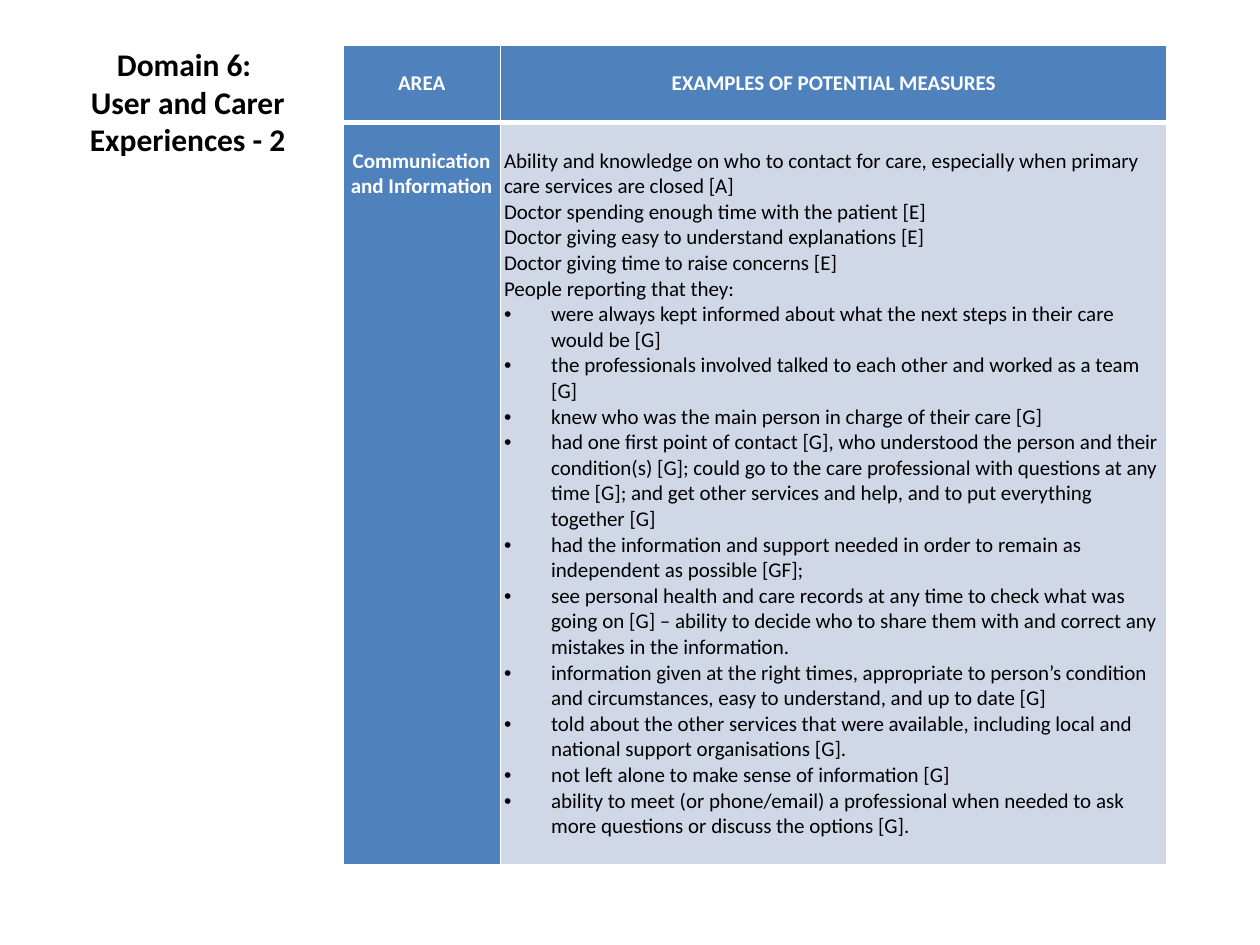
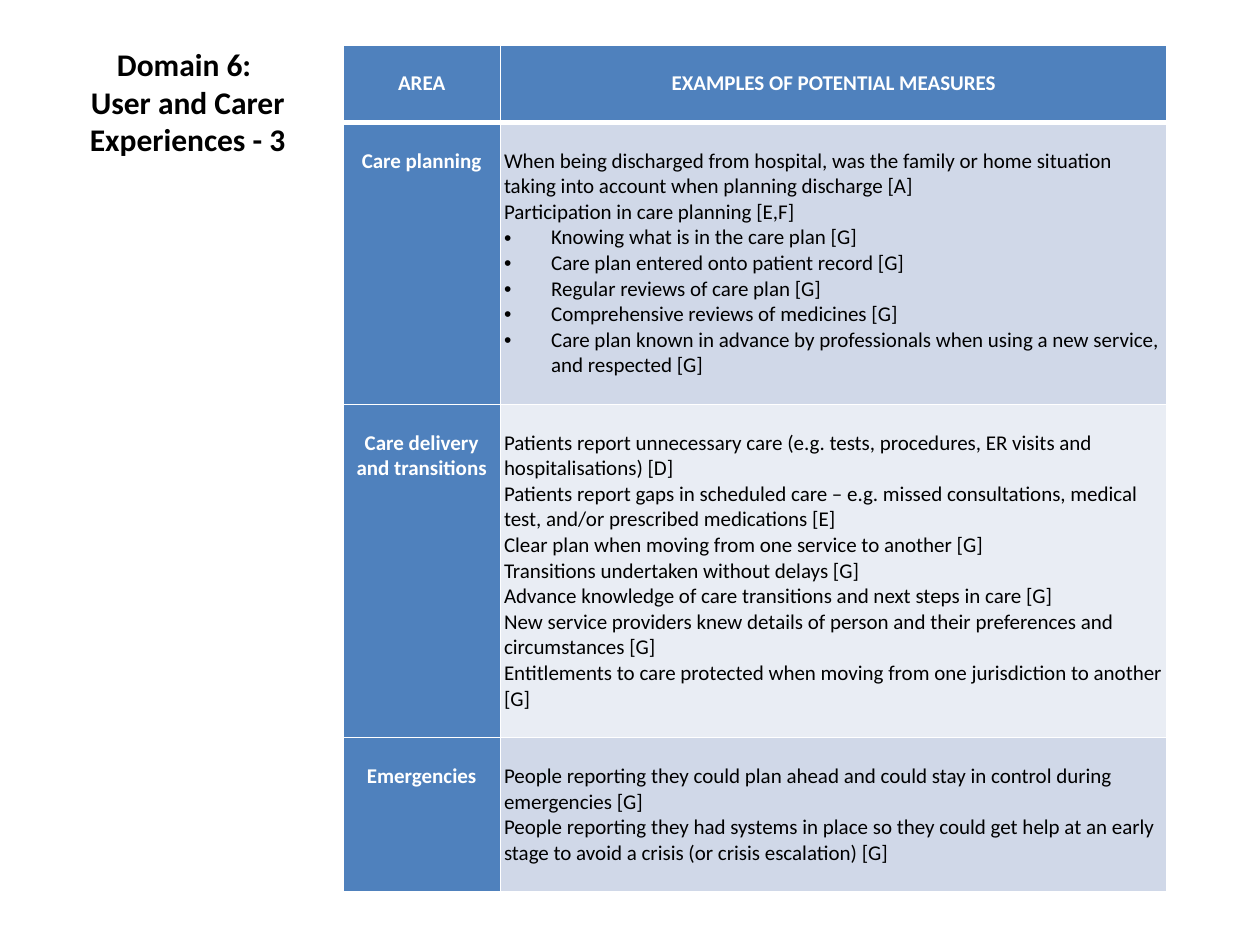
from dataclasses import dataclass

from lxml.etree import SubElement
from pptx import Presentation
from pptx.dml.color import RGBColor
from pptx.enum.text import MSO_ANCHOR, MSO_AUTO_SIZE, PP_ALIGN
from pptx.oxml.ns import qn
from pptx.slide import Slide
from pptx.table import _Cell
from pptx.text.text import _Paragraph
from pptx.util import Cm, Length, Pt

WHITE = RGBColor(0xFF, 0xFF, 0xFF)
BLACK = RGBColor(0x00, 0x00, 0x00)
BLUE = RGBColor(0x4F, 0x81, 0xBD)
ROW_SHADES = (RGBColor(0xD0, 0xD8, 0xE8), RGBColor(0xE9, 0xED, 0xF4))

FONT = "Calibri"
TITLE_SIZE = Pt(18)
TABLE_SIZE = Pt(12)
TITLE_BOX = (Cm(1.27), Cm(0.76), Cm(5.03), Cm(2.57))
TABLE_LEFT, TABLE_TOP = Cm(6.91), Cm(0.91)
AREA_WIDTH, MEASURES_WIDTH = Cm(3.18), Cm(13.44)
HEADER_HEIGHT = Cm(1.55)
SIDE_MARGIN, LINE_MARGIN = Cm(0.07), Cm(0.52)
BULLET_INDENT = Cm(0.95)
THIN, THICK = Pt(1), Pt(3)
HEADINGS = ("AREA", "EXAMPLES OF POTENTIAL MEASURES")


@dataclass(frozen=True)
class Area:
    name: str
    height: Length
    statements: tuple[str, ...]
    bullets: tuple[str, ...] = ()


@dataclass(frozen=True)
class DomainPage:
    number: int
    areas: tuple[Area, ...]


PAGES = (
    DomainPage(2, (
        Area(
            "Communication and Information", Cm(14.95),
            (
                "Ability and knowledge on who to contact for care, especially "
                "when primary care services are closed [A]",
                "Doctor spending enough time with the patient [E]",
                "Doctor giving easy to understand explanations [E]",
                "Doctor giving time to raise concerns [E]",
                "People reporting that they:",
            ),
            (
                "were always kept informed about what the next steps in their "
                "care would be [G]",
                "the professionals involved talked to each other and worked as "
                "a team [G]",
                "knew who was the main person in charge of their care [G]",
                "had one first point of contact [G], who understood the person "
                "and their condition(s) [G]; could go to the care professional "
                "with questions at any time [G]; and get other services and "
                "help, and to put everything together [G]",
                "had the information and support needed in order to remain as "
                "independent as possible [GF];",
                "see personal health and care records at any time to check what "
                "was going on [G] – ability to decide who to share them with "
                "and correct any mistakes in the information.",
                "information given at the right times, appropriate to person’s "
                "condition and circumstances, easy to understand, and up to "
                "date [G]",
                "told about the other services that were available, including "
                "local and national support organisations [G].",
                "not left alone to make sense of information [G]",
                "ability to meet (or phone/email) a professional when needed to "
                "ask more questions or discuss the options [G].",
            ),
        ),
    )),
    DomainPage(3, (
        Area(
            "Care planning", Cm(5.68),
            (
                "When being discharged from hospital, was the family or home "
                "situation taking into account when planning discharge [A]",
                "Participation in care planning [E,F]",
            ),
            (
                "Knowing what is in the care plan [G]",
                "Care plan entered onto patient record [G]",
                "Regular reviews of care plan [G]",
                "Comprehensive reviews of medicines [G]",
                "Care plan known in advance by professionals when using a new "
                "service, and respected [G]",
            ),
        ),
        Area(
            "Care delivery and transitions", Cm(6.72),
            (
                "Patients report unnecessary care (e.g. tests, procedures, ER "
                "visits and hospitalisations) [D]",
                "Patients report gaps in scheduled care – e.g. missed "
                "consultations, medical test, and/or prescribed medications [E]",
                "Clear plan when moving from one service to another [G]",
                "Transitions undertaken without delays [G]",
                "Advance knowledge of care transitions and next steps in care [G]",
                "New service providers knew details of person and their "
                "preferences and circumstances [G]",
                "Entitlements to care protected when moving from one "
                "jurisdiction to another [G]",
            ),
        ),
        Area(
            "Emergencies", Cm(3.1),
            (
                "People reporting they could plan ahead and could stay in "
                "control during emergencies [G]",
                "People reporting they had systems in place so they could get "
                "help at an early stage to avoid a crisis (or crisis "
                "escalation) [G]",
            ),
        ),
    )),
)


def add_run(paragraph: _Paragraph, text: str, size: Length,
            color: RGBColor, bold: bool) -> None:
    run = paragraph.add_run()
    run.text = text
    run.font.name = FONT
    run.font.size = size
    run.font.bold = bold
    run.font.color.rgb = color


def add_bullet(paragraph: _Paragraph) -> None:
    properties = paragraph._p.get_or_add_pPr()
    properties.set("marL", str(BULLET_INDENT))
    properties.set("indent", str(-BULLET_INDENT))
    SubElement(properties, qn("a:buFont"), typeface="Arial")
    SubElement(properties, qn("a:buChar"), char="•")


def style_cell(cell: _Cell, fill: RGBColor, bottom_width: Length = THIN) -> None:
    """Give a cell white borders, a plain fill and one free line above and below."""
    cell.margin_left = cell.margin_right = SIDE_MARGIN
    cell.margin_top = cell.margin_bottom = LINE_MARGIN
    cell.vertical_anchor = MSO_ANCHOR.TOP
    properties = cell._tc.get_or_add_tcPr()
    for side in ("L", "R", "T", "B"):
        width = bottom_width if side == "B" else THIN
        border = SubElement(properties, qn(f"a:ln{side}"), w=str(width))
        border_fill = SubElement(border, qn("a:solidFill"))
        SubElement(border_fill, qn("a:srgbClr"), val=str(WHITE))
    cell.fill.solid()
    cell.fill.fore_color.rgb = fill


def fill_label(cell: _Cell, label: str, bottom_width: Length = THIN) -> None:
    style_cell(cell, BLUE, bottom_width)
    paragraph = cell.text_frame.paragraphs[0]
    paragraph.alignment = PP_ALIGN.CENTER
    add_run(paragraph, label, TABLE_SIZE, WHITE, True)


def fill_measures(cell: _Cell, area: Area, shade: RGBColor) -> None:
    style_cell(cell, shade)
    frame = cell.text_frame
    for index, measure in enumerate(area.statements + area.bullets):
        paragraph = frame.add_paragraph() if index else frame.paragraphs[0]
        paragraph.alignment = PP_ALIGN.LEFT
        if index >= len(area.statements):
            add_bullet(paragraph)
        add_run(paragraph, measure, TABLE_SIZE, BLACK, False)


def set_title(slide: Slide, number: int) -> None:
    title = slide.shapes.title
    title.left, title.top, title.width, title.height = TITLE_BOX
    frame = title.text_frame
    frame.word_wrap = True
    frame.auto_size = MSO_AUTO_SIZE.NONE
    frame.vertical_anchor = MSO_ANCHOR.MIDDLE
    heading = frame.paragraphs[0]
    heading.alignment = PP_ALIGN.CENTER
    add_run(heading, "Domain 6: ", TITLE_SIZE, BLACK, True)
    heading.add_line_break()
    add_run(heading, f"User and Carer Experiences - {number}",
            TITLE_SIZE, BLACK, True)


def add_measures_table(slide: Slide, areas: tuple[Area, ...]) -> None:
    heights = [HEADER_HEIGHT, *(area.height for area in areas)]
    table = slide.shapes.add_table(
        len(heights), len(HEADINGS), TABLE_LEFT, TABLE_TOP,
        AREA_WIDTH + MEASURES_WIDTH, sum(heights)).table
    for column, width in zip(table.columns, (AREA_WIDTH, MEASURES_WIDTH)):
        column.width = width
    for row, height in zip(table.rows, heights):
        row.height = height
    for column_index, heading in enumerate(HEADINGS):
        fill_label(table.cell(0, column_index), heading, THICK)
    for index, area in enumerate(areas):
        fill_label(table.cell(index + 1, 0), area.name)
        fill_measures(table.cell(index + 1, 1), area,
                      ROW_SHADES[index % len(ROW_SHADES)])


def main() -> None:
    deck = Presentation()
    deck.slide_width, deck.slide_height = Cm(25.4), Cm(19.05)
    title_only = deck.slide_layouts.get_by_name("Title Only")
    for page in PAGES:
        slide = deck.slides.add_slide(title_only)
        set_title(slide, page.number)
        add_measures_table(slide, page.areas)
    deck.save("out.pptx")


if __name__ == "__main__":
    main()
